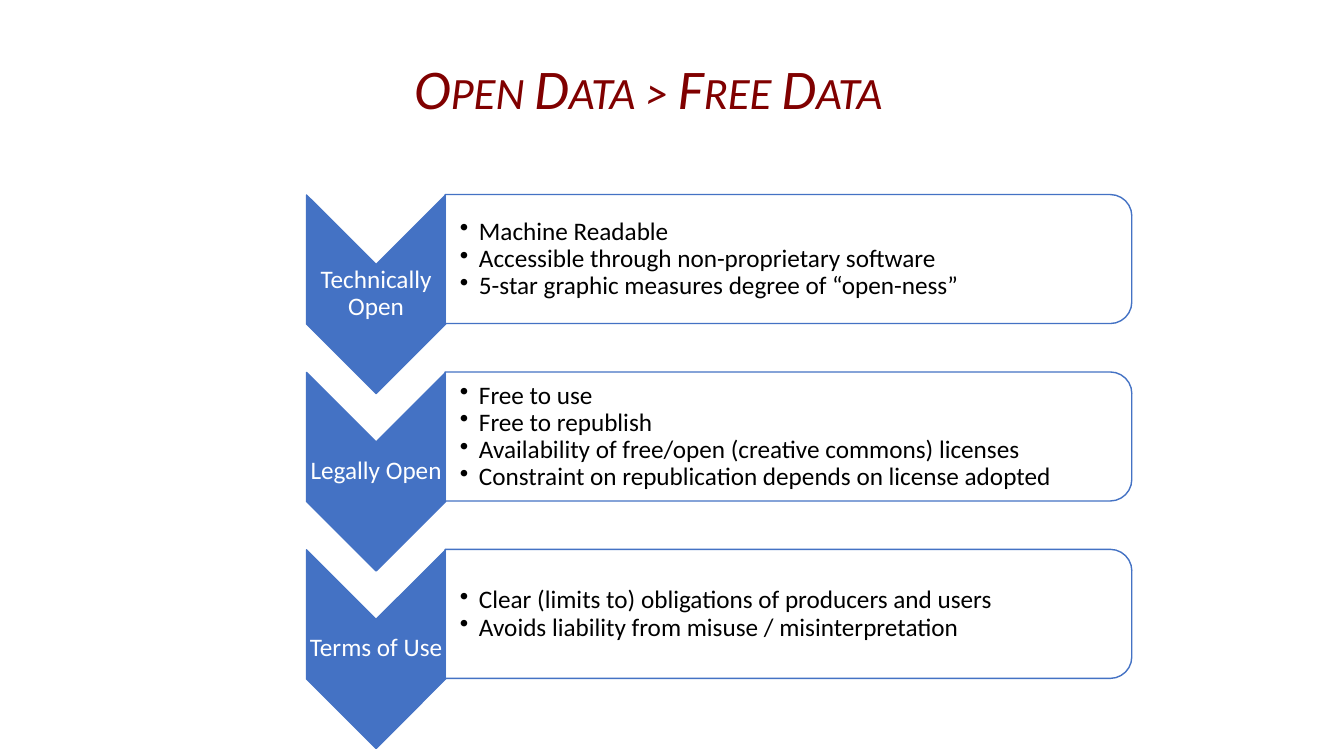
import dataclasses

import lxml.etree
import pptx
import pptx.dml.color
import pptx.enum.shapes
import pptx.enum.text
import pptx.oxml.ns
import pptx.util

Inches = pptx.util.Inches
Align = pptx.enum.text.PP_ALIGN
Preset = pptx.enum.shapes.MSO_SHAPE
qn = pptx.oxml.ns.qn

COLORS = {"accent": "4472C4", "title": "800000", "white": "FFFFFF", "black": "000000"}
FONT = "Calibri"
FIRST_CENTER, ROW_PITCH = 2.92, 1.76
CHEVRON_CENTER, PANEL_CENTER = 3.73, 7.82


@dataclasses.dataclass(frozen=True)
class Aspect:
    label: str
    points: tuple[str, ...]


ASPECTS = (
    Aspect("Technically Open", (
        "Machine Readable",
        "Accessible through non-proprietary software",
        "5-star graphic measures degree of “open-ness”",
    )),
    Aspect("Legally Open", (
        "Free to use",
        "Free to republish",
        "Availability of free/open (creative commons) licenses",
        "Constraint on republication depends on license adopted",
    )),
    Aspect("Terms of Use", (
        "Clear (limits to) obligations of producers and users",
        "Avoids liability from misuse / misinterpretation",
    )),
)


def rgb(name: str) -> pptx.dml.color.RGBColor:
    return pptx.dml.color.RGBColor.from_string(COLORS[name])


def add_turned_shape(slide, preset, center_x: float, center_y: float,
                     width: float, height: float, fill: str):
    """Add an outlined shape turned a quarter clockwise about its center."""
    shape = slide.shapes.add_shape(
        preset, Inches(center_x - width / 2), Inches(center_y - height / 2),
        Inches(width), Inches(height))
    shape.rotation = 90
    shape.shadow.inherit = False
    shape.fill.solid()
    shape.fill.fore_color.rgb = rgb(fill)
    shape.line.color.rgb = rgb("accent")
    shape.line.width = pptx.util.Pt(1)
    return shape


def add_text(slide, left: float, top: float, width: float, height: float,
             text: str, size: int, color: str, inset: float = 0.01, left_inset: float = 0.01):
    """Add a vertically centered text box and return its text frame."""
    frame = slide.shapes.add_textbox(
        Inches(left), Inches(top), Inches(width), Inches(height)).text_frame
    frame.word_wrap = True
    frame.vertical_anchor = pptx.enum.text.MSO_ANCHOR.MIDDLE
    frame.margin_left = Inches(left_inset)
    frame.margin_top = frame.margin_right = frame.margin_bottom = Inches(inset)
    frame.text = text
    for paragraph in frame.paragraphs:
        paragraph.line_spacing = 0.9
        for run in paragraph.runs:
            run.font.name = FONT
            run.font.size = pptx.util.Pt(size)
            run.font.color.rgb = rgb(color)
    return frame


def add_title(slide) -> None:
    frame = add_text(slide, 2.09, 0.48, 8.68, 0.77, "Open Data > Free Data",
                     40, "title", inset=0, left_inset=0)
    heading = frame.paragraphs[0]
    heading.alignment = Align.CENTER
    heading.line_spacing = 1.0
    heading.runs[0].font.italic = True

    # Small capitals and a soft text shadow
    properties = heading.runs[0].font.fill and heading.runs[0]._r.get_or_add_rPr()
    properties.set("cap", "small")
    effects = lxml.etree.Element(qn("a:effectLst"))
    shadow = lxml.etree.SubElement(effects, qn("a:outerShdw"), blurRad="38100",
                                   dist="38100", dir="2700000", algn="tl")
    shade = lxml.etree.SubElement(shadow, qn("a:srgbClr"), val=COLORS["black"])
    lxml.etree.SubElement(shade, qn("a:alpha"), val="43000")
    properties.find(qn("a:solidFill")).addnext(effects)


def add_bullet(paragraph) -> None:
    paragraph.level = 1
    properties = paragraph._p.get_or_add_pPr()
    properties.set("marL", str(Inches(0.19)))
    properties.set("indent", str(Inches(-0.19)))
    lxml.etree.SubElement(properties, qn("a:buChar"), char="•")


def add_aspect(slide, aspect: Aspect, center: float) -> None:
    # Chevron with its label
    add_turned_shape(slide, Preset.CHEVRON, CHEVRON_CENTER, center, 1.97, 1.38, "accent")
    label = add_text(slide, CHEVRON_CENTER - 0.69, center - 0.3, 1.38, 0.59,
                     aspect.label, 18, "white")
    label.paragraphs[0].alignment = Align.CENTER

    # Panel with its points
    panel_center = center - 0.35
    panel = add_turned_shape(slide, Preset.ROUND_2_SAME_RECTANGLE, PANEL_CENTER,
                             panel_center, 1.28, 6.81, "white")
    panel_color = panel.element.spPr.find(qn("a:solidFill"))[0]
    lxml.etree.SubElement(panel_color, qn("a:alpha"), val="90000")
    points = add_text(slide, 4.42, panel_center - 0.57, 6.75, 1.15,
                      "\n".join(aspect.points), 18, "black", left_inset=0.14)
    for paragraph in points.paragraphs:
        add_bullet(paragraph)


def main() -> None:
    presentation = pptx.Presentation()
    presentation.slide_width = Inches(13.33)
    presentation.slide_height = Inches(7.5)
    slide = presentation.slides.add_slide(presentation.slide_layouts[6])
    add_title(slide)
    for row, aspect in enumerate(ASPECTS):
        add_aspect(slide, aspect, FIRST_CENTER + row * ROW_PITCH)
    presentation.save("out.pptx")


if __name__ == "__main__":
    main()
